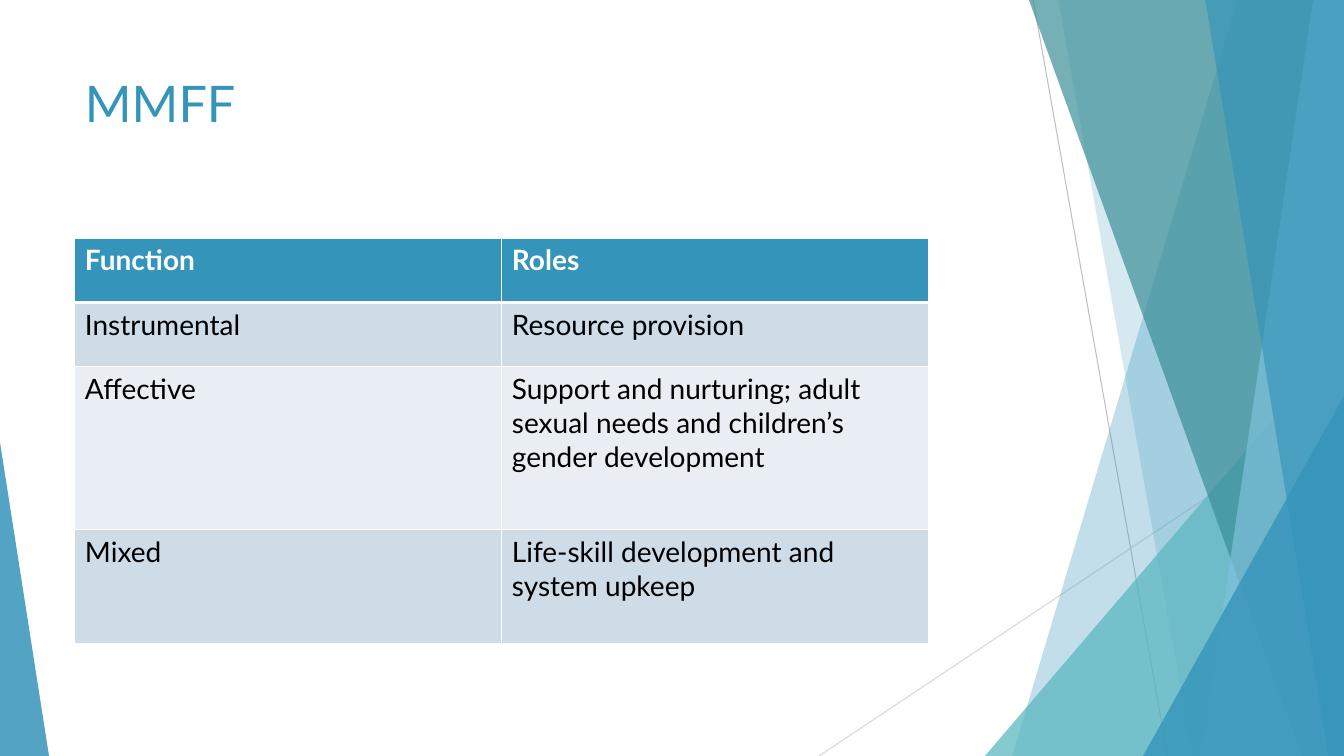
from pptx import Presentation
from pptx.dml.color import RGBColor as RGB
from pptx.enum.shapes import MSO_CONNECTOR as CONN, MSO_SHAPE as SHAPE
from pptx.enum.text import MSO_ANCHOR as ANCHOR, PP_ALIGN as ALIGN
from pptx.oxml import parse_xml
from pptx.oxml.ns import nsdecls
from pptx.util import Pt

W, H = 960, 540
FONT = "Lato"
COLORS = {
    "blue": "3494BA", "teal": "58B6C0", "deep": "3A8F98", "sky": "7FC1DB",
    "white": "FFFFFF", "black": "000000", "grey": "BFBFBF", "pale": "D9D9D9",
    "odd": "CEDCE7", "even": "E8EEF3",
}
ROWS = [
    ("Function", "Roles"),
    ("Instrumental", "Resource provision"),
    ("Affective", "Support and nurturing; adult sexual needs and children’s gender development"),
    ("Mixed", "Life-skill development and system upkeep"),
]
ROW_HEIGHTS = [46, 46, 116.5, 81]


class FacetSlide:
    """Draws styled elements on one slide, with lengths in points."""

    def __init__(self, prs):
        self.s = prs.slides.add_slide(prs.slide_layouts[5])
        self.shapes = self.s.shapes

    def color(self, name):
        return RGB.from_string(COLORS[name])

    def style(self, p, size, color, bold=False):
        p.alignment = ALIGN.LEFT
        for r in p.runs:
            r.font.name, r.font.size, r.font.bold = FONT, Pt(size), bold
            r.font.color.rgb = self.color(color)

    def paint(self, sp, color, opacity):
        sp.shadow.inherit = False
        sp.line.fill.background()
        sp.fill.solid()
        sp.fill.fore_color.rgb = self.color(color)
        clr = sp.element.spPr.find(".//{*}srgbClr")
        clr.append(parse_xml(f'<a:alpha {nsdecls("a")} val="{opacity * 1000}"/>'))

    def line(self, x1, y1, x2, y2, color):
        ln = self.shapes.add_connector(CONN.STRAIGHT, Pt(x1), Pt(y1), Pt(x2), Pt(y2))
        ln.line.width = Pt(0.75)
        ln.line.color.rgb = self.color(color)
        ln.element.spPr.append(parse_xml(f'<a:effectLst {nsdecls("a")}/>'))

    def band(self, top, bottom, color, opacity):
        fb = self.shapes.build_freeform(top, 0, scale=Pt(1))
        fb.add_line_segments([(W, 0), (W, H), (bottom, H)], close=True)
        self.paint(fb.convert_to_shape(), color, opacity)

    def triangle(self, x, y, w, apex, color, opacity):
        sp = self.shapes.add_shape(SHAPE.ISOSCELES_TRIANGLE, Pt(x), Pt(y), Pt(w), Pt(H - y))
        sp.adjustments[0] = apex
        self.paint(sp, color, opacity)

    def title(self, text, x, y, w, h):
        sp = self.shapes.title
        sp.left, sp.top, sp.width, sp.height = Pt(x), Pt(y), Pt(w), Pt(h)
        tf = sp.text_frame
        tf.text = text
        tf.vertical_anchor = ANCHOR.TOP
        self.style(tf.paragraphs[0], 36, "blue")
        sp.element.getparent().append(sp.element)

    def borders(self, cell, top, bottom):
        tcPr = cell._tc.get_or_add_tcPr()
        for side, width in (("L", 1), ("R", 1), ("T", top), ("B", bottom)):
            tcPr.append(parse_xml(
                f'<a:ln{side} {nsdecls("a")} w="{Pt(width)}"><a:solidFill>'
                f'<a:srgbClr val="{COLORS["white"]}"/></a:solidFill></a:ln{side}>'))

    def table(self, rows, heights, x, y, w):
        n = len(rows[0])
        tbl = self.shapes.add_table(len(rows), n, Pt(x), Pt(y), Pt(w), Pt(sum(heights))).table
        for col in tbl.columns:
            col.width = Pt(w / n)
        for i, (row, height) in enumerate(zip(rows, heights)):
            tbl.rows[i].height = Pt(height)
            head = i == 0
            fill = "blue" if head else "odd" if i % 2 else "even"
            for j, text in enumerate(row):
                cell = tbl.cell(i, j)
                cell.text_frame.text = text
                self.style(cell.text_frame.paragraphs[0], 20, "white" if head else "black", head)
                self.borders(cell, 3 if i == 1 else 1, 3 if head else 1)
                cell.fill.solid()
                cell.fill.fore_color.rgb = self.color(fill)


def main():
    prs = Presentation()
    prs.slide_width, prs.slide_height = Pt(W), Pt(H)
    s = FacetSlide(prs)
    s.line(738, 0, 834, H, "grey")
    s.line(W, 290, 585, H, "pale")
    s.band(884, 723, "blue", 30)
    s.band(756, 852, "blue", 20)
    s.triangle(703.5, 240, 256.5, 1, "teal", 72)
    s.band(735, 929.5, "deep", 70)
    s.band(938, 858, "sky", 70)
    s.band(861, 949, "blue", 65)
    s.triangle(816.5, 283, 143.5, 1, "blue", 80)
    s.triangle(0, 316, 35, 0, "blue", 85)
    s.title("MMFF", 53.5, 48, 677, 104)
    s.table(ROWS, ROW_HEIGHTS, 53.5, 170, 610)
    prs.save("out.pptx")


if __name__ == "__main__":
    main()
